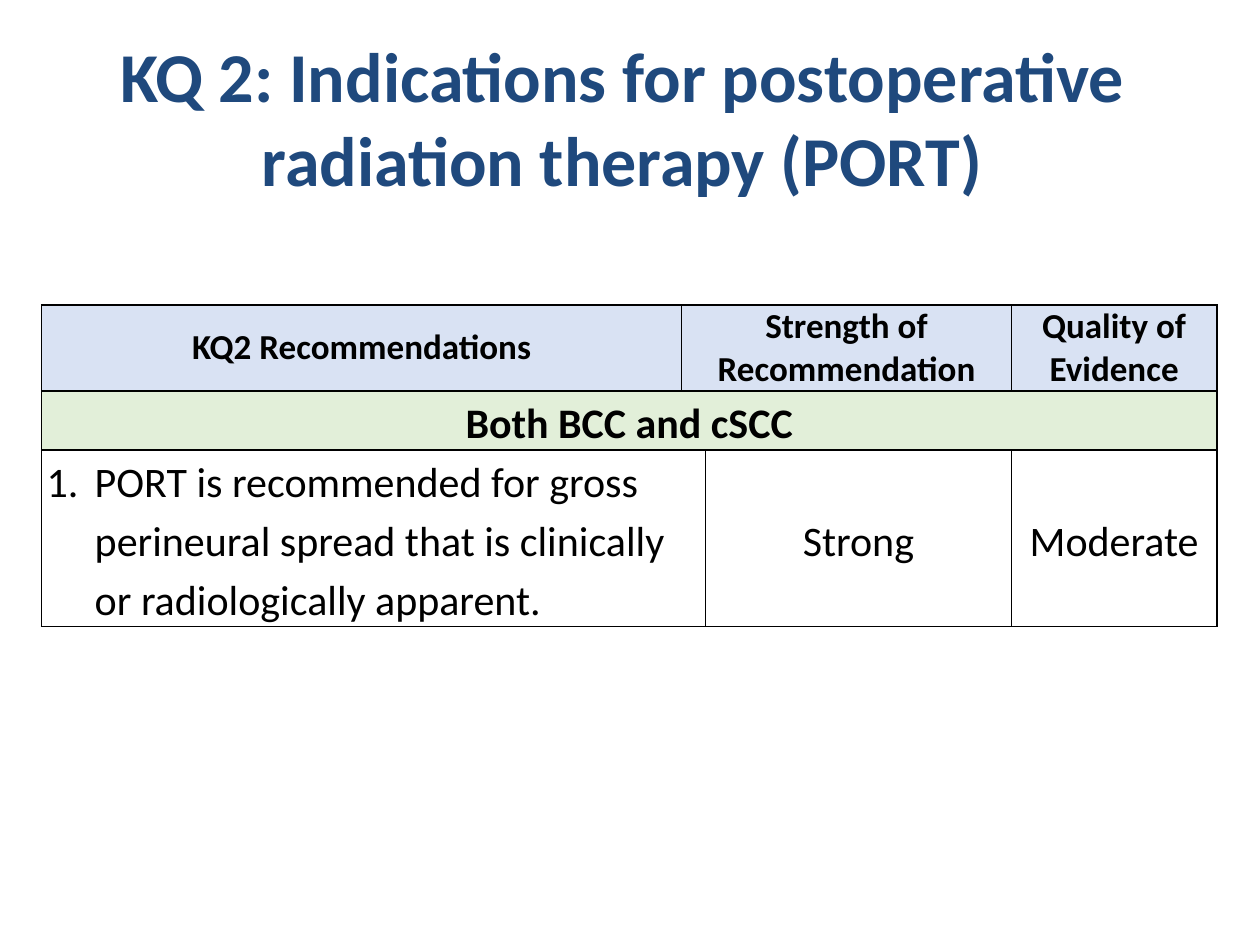
from lxml.etree import SubElement
from pptx import Presentation
from pptx.dml.color import RGBColor
from pptx.enum.text import MSO_ANCHOR, MSO_AUTO_SIZE, PP_ALIGN
from pptx.oxml.ns import qn
from pptx.util import Cm, Pt

COLORS = {
    "title": "1F497D",
    "text": "000000",
    "border": "000000",
    "header": "D9E2F3",
    "group": "E2EFD9",
}
FONT = "Calibri"
COLUMN_WIDTHS = [12.9, 0.48, 6.17, 4.14]
ROW_HEIGHTS = [1.73, 1.19, 3.56]


def style_text(para, size, color, bold):
    for span in para.runs:
        span.font.name = FONT
        span.font.size = Pt(size)
        span.font.bold = bold
        span.font.color.rgb = RGBColor.from_string(COLORS[color])


def add_title(page, text):
    title = page.shapes.title
    title.left, title.top, title.width, title.height = Cm(1.27), Cm(0.76), Cm(22.86), Cm(3.18)
    frame = title.text_frame
    frame.text = text
    frame.word_wrap = True
    frame.auto_size = MSO_AUTO_SIZE.NONE
    frame.vertical_anchor = MSO_ANCHOR.MIDDLE
    para = frame.paragraphs[0]
    para.alignment = PP_ALIGN.CENTER
    style_text(para, 40, "title", True)


def add_borders(cell):
    properties = cell._tc.get_or_add_tcPr()
    for side in ("a:lnL", "a:lnR", "a:lnT", "a:lnB"):
        line = SubElement(properties, qn(side), w=str(Pt(1)))
        fill = SubElement(line, qn("a:solidFill"))
        SubElement(fill, qn("a:srgbClr"), val=COLORS["border"])


def add_number(para):
    properties = para._p.get_or_add_pPr()
    properties.set("marL", str(Cm(0.97)))
    properties.set("indent", str(Cm(-0.97)))
    SubElement(properties, qn("a:buFont"), typeface="+mj-lt")
    SubElement(properties, qn("a:buAutoNum"), type="arabicPeriod")


def fill_cell(cell, text, size=24, bold=False, fill=None, spacing=1.15, numbered=False):
    cell.text_frame.text = text
    cell.margin_left = cell.margin_right = Cm(0.1)
    cell.margin_top = cell.margin_bottom = 0
    cell.vertical_anchor = MSO_ANCHOR.TOP if numbered else MSO_ANCHOR.MIDDLE
    if fill:
        cell.fill.solid()
        cell.fill.fore_color.rgb = RGBColor.from_string(COLORS[fill])
    para = cell.text_frame.paragraphs[0]
    para.alignment = PP_ALIGN.LEFT if numbered else PP_ALIGN.CENTER
    para.line_spacing = spacing
    if numbered:
        add_number(para)
    style_text(para, size, "text", bold)


def add_recommendations(page):
    table = page.shapes.add_table(
        len(ROW_HEIGHTS), len(COLUMN_WIDTHS), Cm(0.84), Cm(6.15),
        Cm(sum(COLUMN_WIDTHS)), Cm(sum(ROW_HEIGHTS))).table
    table.first_row = table.horz_banding = False
    for column, width in zip(table.columns, COLUMN_WIDTHS):
        column.width = Cm(width)
    for row, height in zip(table.rows, ROW_HEIGHTS):
        row.height = Cm(height)
    for cell in table.iter_cells():
        add_borders(cell)
        cell.fill.background()

    # The narrow second column joins a different neighbour in each row
    for row, first, last in [(0, 1, 2), (1, 0, 3), (2, 0, 1)]:
        table.cell(row, first).merge(table.cell(row, last))

    # Header row
    headers = {0: "KQ2 Recommendations", 1: "Strength of Recommendation", 3: "Quality of Evidence"}
    for column, text in headers.items():
        fill_cell(table.cell(0, column), text, size=20, bold=True, fill="header", spacing=1.0)

    # Group row
    fill_cell(table.cell(1, 0), "Both BCC and cSCC", bold=True, fill="group")

    # Recommendation row
    fill_cell(table.cell(2, 0), "PORT is recommended for gross perineural spread that is "
              "clinically or radiologically apparent.", numbered=True)
    fill_cell(table.cell(2, 2), "Strong")
    fill_cell(table.cell(2, 3), "Moderate")


def main():
    deck = Presentation()
    deck.slide_width, deck.slide_height = Cm(25.4), Cm(19.05)
    page = deck.slides.add_slide(deck.slide_layouts[5])
    add_title(page, "KQ 2: Indications for postoperative \vradiation therapy (PORT) ")
    add_recommendations(page)
    deck.save("out.pptx")


if __name__ == "__main__":
    main()
